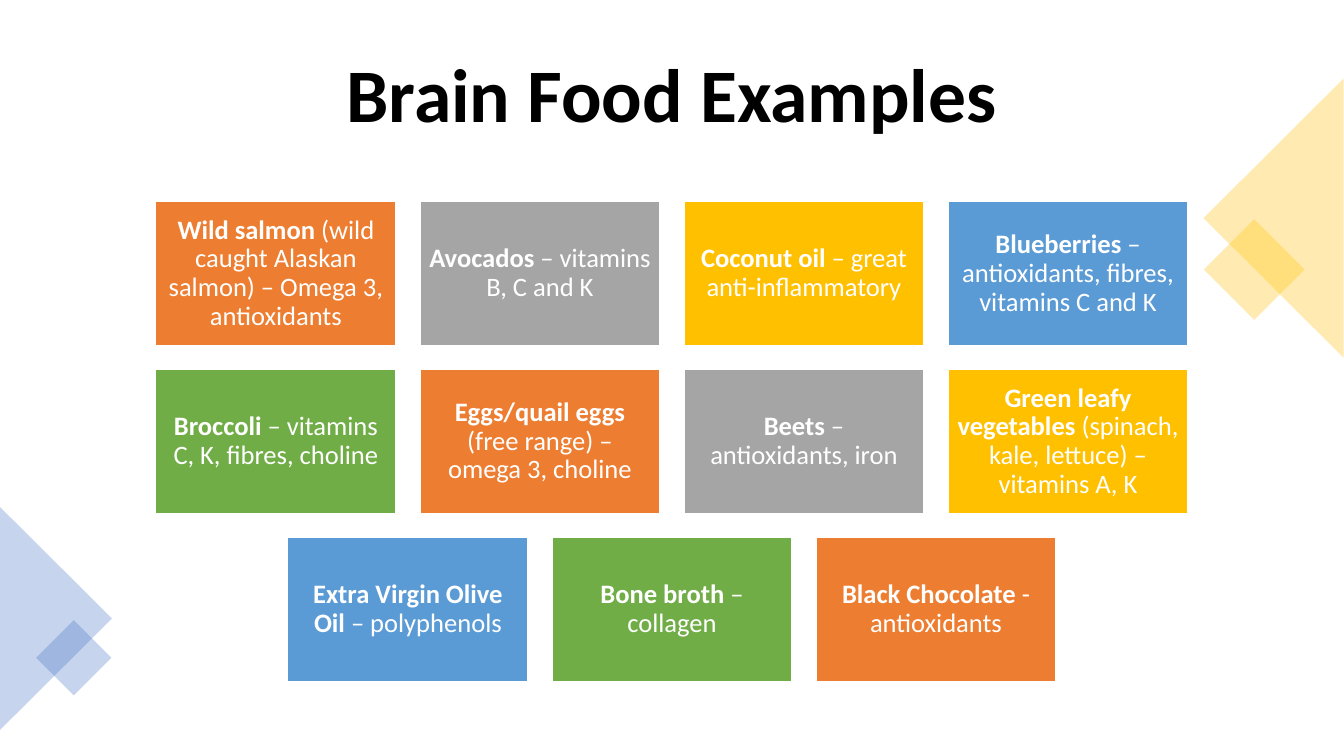
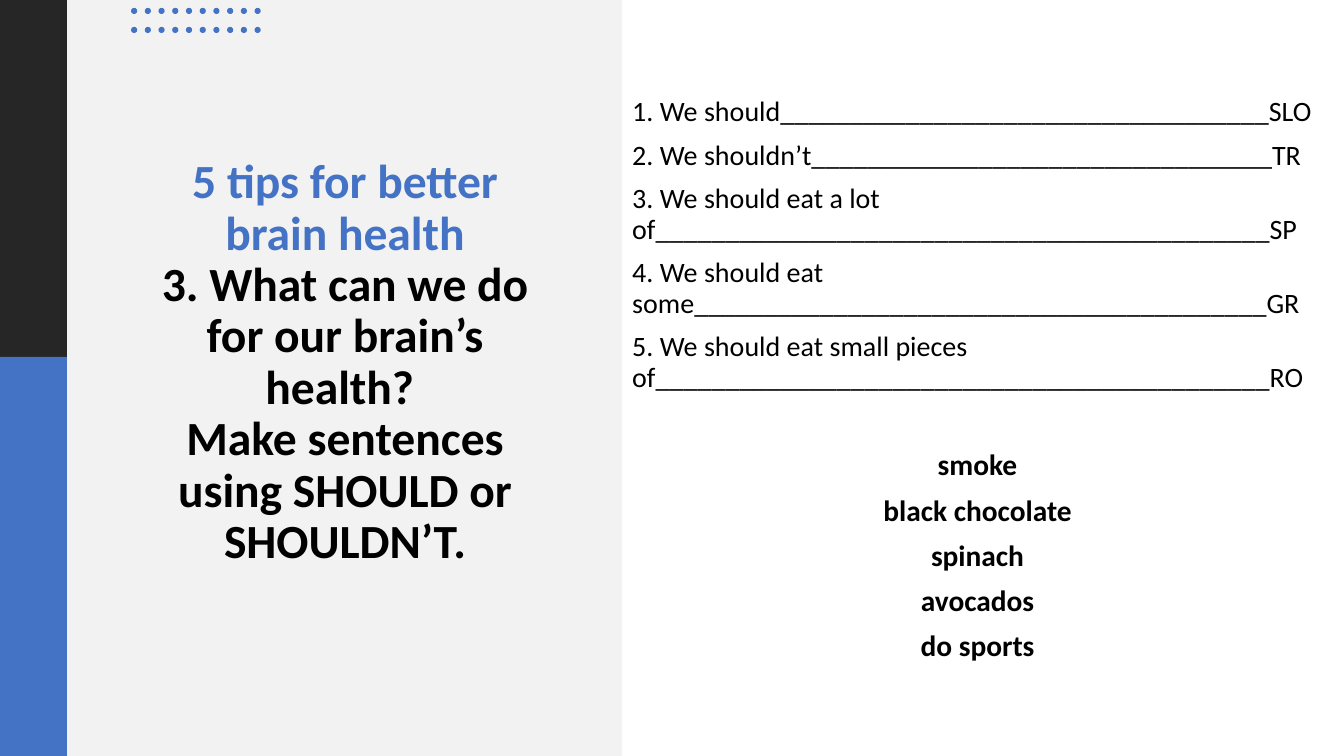
from itertools import cycle
from lxml import etree
from pptx import Presentation
from pptx.dml.color import RGBColor
from pptx.enum import shapes, text
from pptx.oxml.ns import qn
from pptx.util import Pt

FONT = "Calibri"
BLACK = RGBColor(0x00, 0x00, 0x00)
WHITE = RGBColor(0xFF, 0xFF, 0xFF)
DARK = RGBColor(0x26, 0x26, 0x26)
PALE = RGBColor(0xF2, 0xF2, 0xF2)
BLUE = RGBColor(0x44, 0x72, 0xC4)
GOLD = RGBColor(0xFF, 0xC0, 0x00)
ORANGE = RGBColor(0xED, 0x7D, 0x31)
GREY = RGBColor(0xA5, 0xA5, 0xA5)
SKY = RGBColor(0x5B, 0x9B, 0xD5)
GREEN = RGBColor(0x70, 0xAD, 0x47)

RECT = shapes.MSO_SHAPE.RECTANGLE
TRIANGLE = shapes.MSO_SHAPE.ISOSCELES_TRIANGLE
OVAL = shapes.MSO_SHAPE.OVAL
CENTER = text.PP_ALIGN.CENTER
LEFT = text.PP_ALIGN.LEFT
MIDDLE = text.MSO_ANCHOR.MIDDLE
TOP = text.MSO_ANCHOR.TOP

SLIDE_W, SLIDE_H = 960, 540

# Slide 1: (bold food, plain remark) in rows
FOODS = [
    [("Wild salmon ", "(wild caught Alaskan salmon) – Omega 3, antioxidants"),
     ("Avocados", " – vitamins B, C and K"),
     ("Coconut oil ", "– great anti-inflammatory"),
     ("Blueberries", " – antioxidants, fibres, vitamins C and K")],
    [("Broccoli", " – vitamins C, K, fibres, choline"),
     ("Eggs/quail eggs ", "(free range) – omega 3, choline"),
     ("Beets", " – antioxidants, iron"),
     ("Green leafy vegetables", " (spinach, kale, lettuce) – vitamins A, K")],
    [("Extra Virgin Olive Oil ", "– polyphenols"),
     ("Bone broth ", "– collagen"),
     ("Black Chocolate ", "- antioxidants")],
]
TILE_COLORS = [ORANGE, GREY, GOLD, SKY, GREEN]
TILE_W, TILE_H, TILE_GAP, TILES_TOP = 171.6, 103, 17, 144

# kind, box, rotation, colour
CORNERS = [
    (RECT, (870.4, 167, 51, 51), 45, GOLD),
    (TRIANGLE, (810, 105.8, 199.4, 100), 270, GOLD),
    (TRIANGLE, (-39.6, 401.8, 159.2, 80), 90, BLUE),
    (RECT, (33.7, 450.9, 38, 38), 45, BLUE),
]

# Slide 2
QUESTION = [
    ("5 tips for better brain health", BLUE),
    ("3. What can we do for our brain’s health? ", BLACK),
    ("Make sentences using SHOULD or SHOULDN’T.", BLACK),
]
# start, length of the gap to fill in, country
SENTENCES = [
    ("1. We should", 35, "SLO"),
    ("2. We shouldn’t", 33, "TR"),
    ("3. We should eat a lot of", 44, "SP"),
    ("4. We should eat some", 41, "GR"),
    ("5. We should eat small pieces of", 44, "RO"),
]
ANSWERS = ["smoke", "black chocolate", "spinach", "avocados", "do sports"]
PANELS = [
    ((0, 0, 48, 255), DARK),
    ((0, 255, 48, 285), BLUE),
    ((48, 0, 396.5, SLIDE_H), PALE),
]
DOT_COLS, DOT_ROWS, DOT_SIZE = 10, 2, 4.4
DOT_LEFT, DOT_TOP, DOT_DX, DOT_DY = 93.6, 5.6, 9.8, 13.6


def add_block(slide, kind, box, color, rotation=0, opacity=None):
    """Add a filled shape without line or shadow."""
    sp = slide.shapes.add_shape(kind, *map(Pt, box))
    sp.shadow.inherit = False
    sp.fill.solid()
    sp.fill.fore_color.rgb = color
    sp.line.fill.background()
    sp.rotation = rotation
    if opacity is not None:
        clr = sp.fill._xPr.find(qn("a:solidFill"))[0]
        etree.SubElement(clr, qn("a:alpha")).set("val", str(opacity * 1000))
    return sp


def set_frame(sp, anchor, margin_x=7.2, margin_y=3.6):
    tf = sp.text_frame
    tf.word_wrap = True
    tf.auto_size = text.MSO_AUTO_SIZE.NONE
    tf.vertical_anchor = anchor
    tf.margin_left = tf.margin_right = Pt(margin_x)
    tf.margin_top = tf.margin_bottom = Pt(margin_y)
    return tf


def format_paragraph(p, align, before=0):
    p.alignment = align
    p.line_spacing = 0.9
    p.space_before = Pt(before)


def add_run(p, words, size, color=BLACK, bold=False):
    r = p.add_run()
    r.text = words
    r.font.name = FONT
    r.font.size = Pt(size)
    r.font.bold = bold
    r.font.color.rgb = color


def add_titled_slide(prs, box, lines, size):
    """Add a title-only slide; lines holds (words, colour) pairs."""
    slide = prs.slides.add_slide(prs.slide_layouts[5])
    title = slide.shapes.title
    title.left, title.top, title.width, title.height = map(Pt, box)
    p = set_frame(title, MIDDLE).paragraphs[0]
    format_paragraph(p, CENTER)
    for i, (words, color) in enumerate(lines):
        if i:
            p.add_line_break()
        add_run(p, words, size, color, bold=True)
    return slide


def build_foods(prs):
    slide = add_titled_slide(prs, (50.4, 25.2, 859, 89.3),
                             [("Brain Food Examples", BLACK)], 54)
    for kind, box, rotation, color in CORNERS:
        add_block(slide, kind, box, color, rotation, opacity=30)
    colors = cycle(TILE_COLORS)
    for row, foods in enumerate(FOODS):
        row_w = len(foods) * (TILE_W + TILE_GAP) - TILE_GAP
        left = (SLIDE_W - row_w) / 2
        top = TILES_TOP + row * (TILE_H + TILE_GAP)
        for col, (food, remark) in enumerate(foods):
            x = left + col * (TILE_W + TILE_GAP)
            sp = add_block(slide, RECT, (x, top, TILE_W, TILE_H), next(colors))
            sp.line.color.rgb = WHITE
            sp.line.width = Pt(1)
            p = set_frame(sp, MIDDLE, 5.7, 5.7).paragraphs[0]
            format_paragraph(p, CENTER)
            add_run(p, food, 19, WHITE, bold=True)
            add_run(p, remark, 19, WHITE)


def build_exercise(prs):
    slide = add_titled_slide(prs, (92, 105, 309, 309), QUESTION, 34)
    for box, color in PANELS:
        add_block(slide, RECT, box, color)
    # The title stands in front of the pale panel
    slide.shapes._spTree.append(slide.shapes.title._element)
    for row in range(DOT_ROWS):
        for col in range(DOT_COLS):
            add_block(slide, OVAL, (DOT_LEFT + col * DOT_DX, DOT_TOP + row * DOT_DY,
                                    DOT_SIZE, DOT_SIZE), BLUE)

    sp = slide.shapes.add_textbox(*map(Pt, (444.5, 66, 507.5, 420)))
    tf = set_frame(sp, TOP)
    for i, (start, gap, country) in enumerate(SENTENCES):
        p = tf.add_paragraph() if i else tf.paragraphs[0]
        format_paragraph(p, LEFT, 9.6 if i else 0)
        add_run(p, start + "_" * gap + country, 20)
    for i, answer in enumerate(ANSWERS):
        p = tf.add_paragraph()
        format_paragraph(p, CENTER, 9.6 if i else 41)
        add_run(p, answer, 21, bold=True)


def main():
    prs = Presentation()
    prs.slide_width, prs.slide_height = Pt(SLIDE_W), Pt(SLIDE_H)
    build_foods(prs)
    build_exercise(prs)
    prs.save("out.pptx")


if __name__ == "__main__":
    main()
